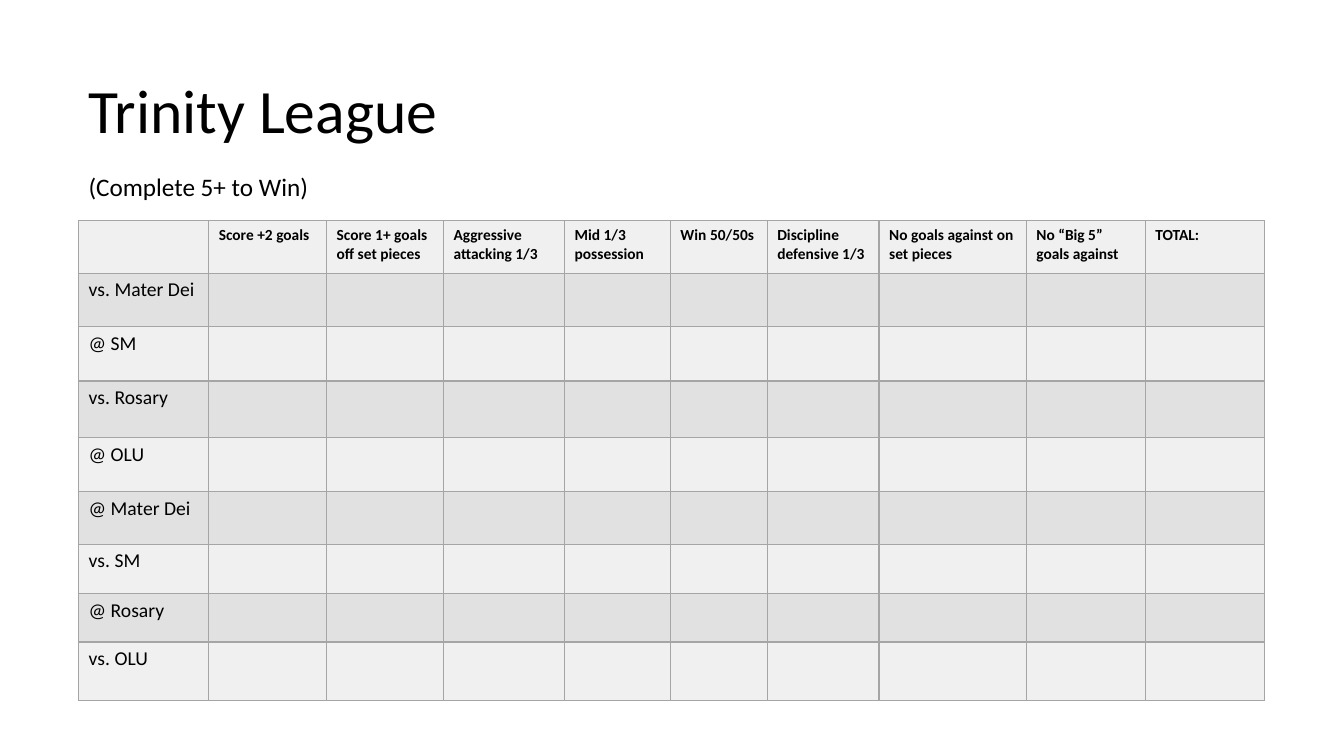
from dataclasses import dataclass

from lxml.etree import SubElement
from pptx import Presentation
from pptx.dml.color import RGBColor as Color
from pptx.enum.text import MSO_ANCHOR as Anchor
from pptx.oxml.ns import qn
from pptx.util import Emu, Pt

EMU_PER_PX = 9144


@dataclass(frozen=True)
class Theme:
    font: str = "Calibri"
    ink: str = "000000"
    border: str = "A5A5A5"
    bands: tuple = ("F0F0F0", "E1E1E1")
    title_size: int = 44
    note_size: int = 18
    header_size: int = 11
    label_size: int = 14
    border_width: int = 1


def px(length):
    return Emu(length * EMU_PER_PX)


class SlideBuilder:
    """Draws styled text and tables on one slide."""

    def __init__(self, page, theme):
        self.page = page
        self.theme = theme

    def set_text(self, frame, text, size, bold=False):
        frame.text = text
        for para in frame.paragraphs:
            for span in para.runs:
                span.font.name = self.theme.font
                span.font.size = Pt(size)
                span.font.bold = bold
                span.font.color.rgb = Color.from_string(self.theme.ink)

    def add_text(self, left, top, width, height, text, size, anchor=Anchor.TOP, spacing=1.0):
        box = self.page.shapes.add_textbox(px(left), px(top), px(width), px(height))
        frame = box.text_frame
        frame.word_wrap = True
        frame.vertical_anchor = anchor
        self.set_text(frame, text, size)
        frame.paragraphs[0].line_spacing = spacing

    def outline(self, cell):
        properties = cell._tc.get_or_add_tcPr()
        for side in ("a:lnL", "a:lnR", "a:lnT", "a:lnB"):
            line = SubElement(properties, qn(side), w=str(Pt(self.theme.border_width)))
            fill = SubElement(line, qn("a:solidFill"))
            SubElement(fill, qn("a:srgbClr"), val=self.theme.border)

    def add_grid(self, left, top, widths, heights, headers, labels):
        frame = self.page.shapes.add_table(
            len(heights), len(widths), px(left), px(top), px(sum(widths)), px(sum(heights))
        )
        table = frame.table
        table.first_row = table.horz_banding = False
        for column, width in zip(table.columns, widths):
            column.width = px(width)
        for index, (row, height) in enumerate(zip(table.rows, heights)):
            row.height = px(height)
            for cell in row.cells:
                self.outline(cell)
                cell.fill.solid()
                cell.fill.fore_color.rgb = Color.from_string(self.theme.bands[index % 2])
        for column, header in enumerate(headers, start=1):
            self.set_text(table.cell(0, column).text_frame, header, self.theme.header_size, bold=True)
        for row, label in enumerate(labels, start=1):
            self.set_text(table.cell(row, 0).text_frame, label, self.theme.label_size)


GOALS = [
    "Score +2 goals",
    "Score 1+ goals off set pieces",
    "Aggressive attacking 1/3",
    "Mid 1/3 possession",
    "Win 50/50s",
    "Discipline defensive 1/3",
    "No goals against on set pieces",
    "No “Big 5” goals against",
    "TOTAL:",
]
MATCHES = [
    "vs. Mater Dei", "@ SM", "vs. Rosary", "@ OLU",
    "@ Mater Dei", "vs. SM", "@ Rosary", "vs. OLU",
]
COLUMN_WIDTHS = [129, 117, 116, 120, 105, 96, 111, 146, 118, 118]
ROW_HEIGHTS = [52, 53, 54, 56, 54, 52, 49, 48, 58]


def main():
    deck = Presentation()
    deck.slide_width, deck.slide_height = px(1333), px(750)
    theme = Theme()
    slide = SlideBuilder(deck.slides.add_slide(deck.slide_layouts[6]), theme)
    slide.add_text(78, 40, 433, 145, "Trinity League", theme.title_size, Anchor.MIDDLE, 0.9)
    slide.add_grid(78, 219, COLUMN_WIDTHS, ROW_HEIGHTS, GOALS, MATCHES)
    slide.add_text(78, 165, 667, 40, "(Complete 5+ to Win)", theme.note_size)
    deck.save("out.pptx")


if __name__ == "__main__":
    main()
